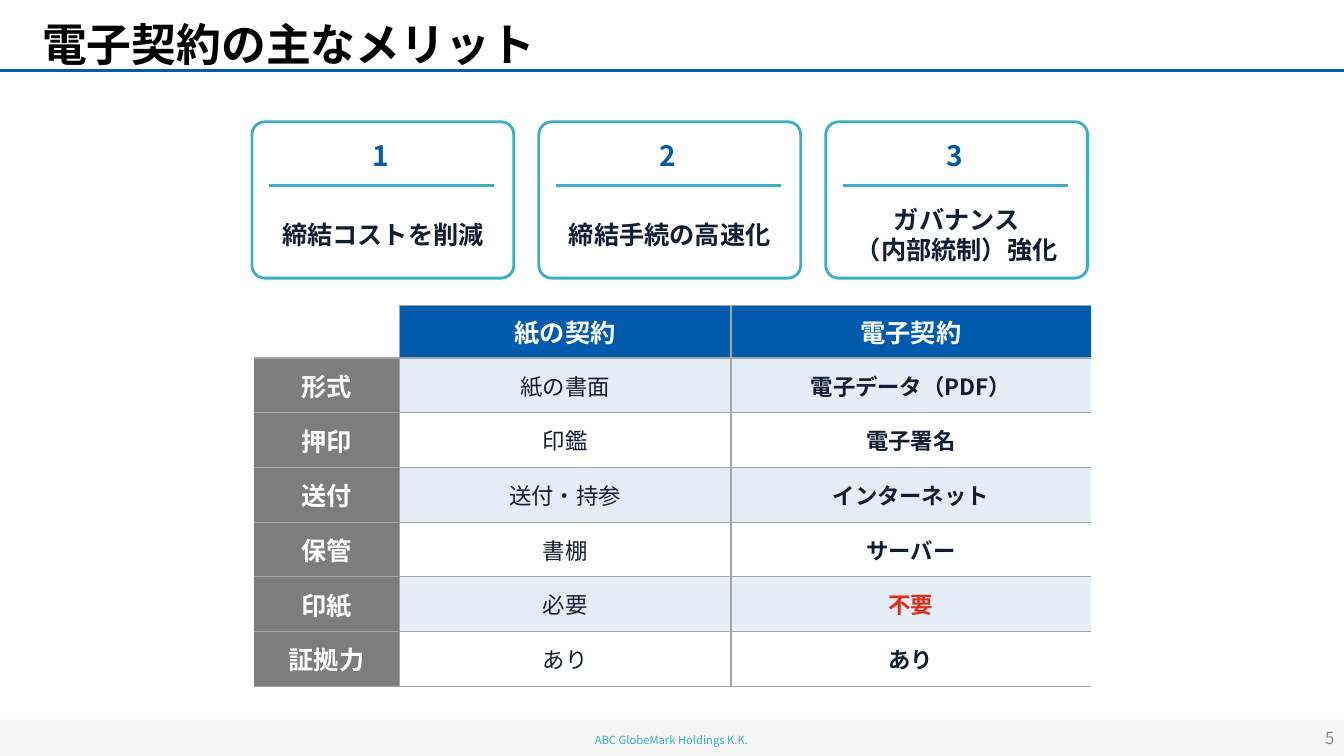
from lxml.etree import SubElement
from pptx import Presentation
from pptx.dml.color import RGBColor
from pptx.enum.lang import MSO_LANGUAGE_ID as Lang
from pptx.enum.shapes import MSO_CONNECTOR as Link, MSO_SHAPE as Kind
from pptx.enum.text import MSO_ANCHOR as Anchor, PP_ALIGN as Align
from pptx.oxml import parse_xml
from pptx.oxml.ns import nsdecls, qn
from pptx.util import Cm, Pt

FONT = "Noto Sans CJK JP"
BLUE, TEAL, NAVY, GRAY = "005BAC", "3AAFC5", "101D32", "7D7D7D"
WHITE, PALE, RED, RULE = "FFFFFF", "E5EEF7", "E22C18", "A5A5A5"


def rgb(code):
    return RGBColor.from_string(code)


def write(frame, text, size=18, color=NAVY, bold=True, align=Align.CENTER,
          anchor=Anchor.MIDDLE, space=1.0):
    """Fill a text frame, one paragraph for each line of text."""
    frame.word_wrap = True
    frame.vertical_anchor = anchor
    for i, line in enumerate(text.split("\n")):
        par = frame.add_paragraph() if i else frame.paragraphs[0]
        par.alignment = align
        par.line_spacing = space
        run = par.add_run()
        run.text = line
        font = run.font
        font.size, font.bold = Pt(size), bold
        font.color.rgb = rgb(color)
        font.name = FONT
        font.language_id = Lang.JAPANESE
        SubElement(font._element, qn("a:ea")).set("typeface", FONT)


deck = Presentation()
deck.slide_width, deck.slide_height = Cm(33.87), Cm(19.05)
slide = deck.slides.add_slide(deck.slide_layouts[6])
shapes = slide.shapes

# Footer band, title and page number
band = shapes.add_shape(Kind.RECTANGLE, 0, Cm(18.14), Cm(33.87), Cm(0.91))
band.shadow.inherit = False
band.fill.solid()
band.fill.fore_color.rgb = rgb("F5F5F5")
band.line.fill.background()

frames = [
    ((0.81, 0.23, 28.47, 1.73), "電子契約の主なメリット",
     dict(size=32, color="000000", align=Align.LEFT)),
    ((13.56, 18.29, 6.73, 0.66), "ABC GlobeMark Holdings K.K.",
     dict(size=8, color=TEAL, bold=False, anchor=Anchor.TOP, space=1.2)),
    ((32.36, 18.08, 1.52, 1.02), "5",
     dict(size=12, color="88898D", bold=False, align=Align.RIGHT)),
]
rules = [(0, 33.87, 1.78, BLUE)]

# Three merit cards
merits = ["締結コストを削減", "締結手続の高速化", "ガバナンス\n（内部統制）強化"]
for i, merit in enumerate(merits):
    left = 6.35 + 7.23 * i
    card = shapes.add_shape(Kind.ROUNDED_RECTANGLE, Cm(left), Cm(3.07), Cm(6.6), Cm(3.94))
    card.adjustments[0] = 0.082
    card.shadow.inherit = False
    card.fill.solid()
    card.fill.fore_color.rgb = rgb(WHITE)
    card.line.color.rgb = rgb(TEAL)
    card.line.width = Pt(2)
    rules.append((left + 0.43, left + 6.1, 4.67, TEAL))
    frames.append(((left, 3.35, 6.5, 1.12), str(i + 1), dict(size=20, color=BLUE)))
    frames.append(((left + 0.2, 5.05, 6.2, 1.7), merit, {}))

for start, end, y, color in rules:
    rule = shapes.add_connector(Link.STRAIGHT, Cm(start), Cm(y), Cm(end), Cm(y))
    rule.line.color.rgb = rgb(color)
    rule.line.width = Pt(2.25)
    SubElement(rule._element.spPr, qn("a:effectLst"))

for place, text, style in frames:
    write(shapes.add_textbox(*map(Cm, place)).text_frame, text, **style)

# Comparison of paper and electronic contracts
rows = [
    ("", "紙の契約", "電子契約"),
    ("形式", "紙の書面", "電子データ（PDF）"),
    ("押印", "印鑑", "電子署名"),
    ("送付", "送付・持参", "インターネット"),
    ("保管", "書棚", "サーバー"),
    ("印紙", "必要", "不要"),
    ("証拠力", "あり", "あり"),
]
table = shapes.add_table(7, 3, Cm(6.4), Cm(7.7), Cm(21.09), Cm(9.6)).table
for col, width in zip(table.columns, (3.66, 8.36, 9.07)):
    col.width = Cm(width)
for r, row in enumerate(rows):
    table.rows[r].height = Cm(1.38 if r else 1.32)
    for c, text in enumerate(row):
        cell = table.cell(r, c)
        cell.margin_left = cell.margin_right = Cm(0.18)
        cell.margin_top = cell.margin_bottom = Cm(0.1)
        cell.vertical_anchor = Anchor.MIDDLE
        head = r == 0 or c == 0
        if head:
            fill = GRAY if r else BLUE if c else WHITE
        else:
            fill = PALE if r % 2 else WHITE
        cell.fill.solid()
        cell.fill.fore_color.rgb = rgb(fill)
        if text:
            color = WHITE if head else RED if text == "不要" else NAVY
            write(cell.text_frame, text, size=18 if head else 16,
                  color=color, bold=head or c == 2)
        edges = {"L": c > 0, "R": c < 2, "T": r + c > 0, "B": True}
        for i, (side, shown) in enumerate(edges.items()):
            paint = (f'<a:solidFill><a:srgbClr val="{RULE}"/></a:solidFill>'
                     if shown else "<a:noFill/>")
            edge = f'<a:ln{side} {nsdecls("a")} w="12700">{paint}</a:ln{side}>'
            cell._tc.get_or_add_tcPr().insert(i, parse_xml(edge))

deck.save("out.pptx")
